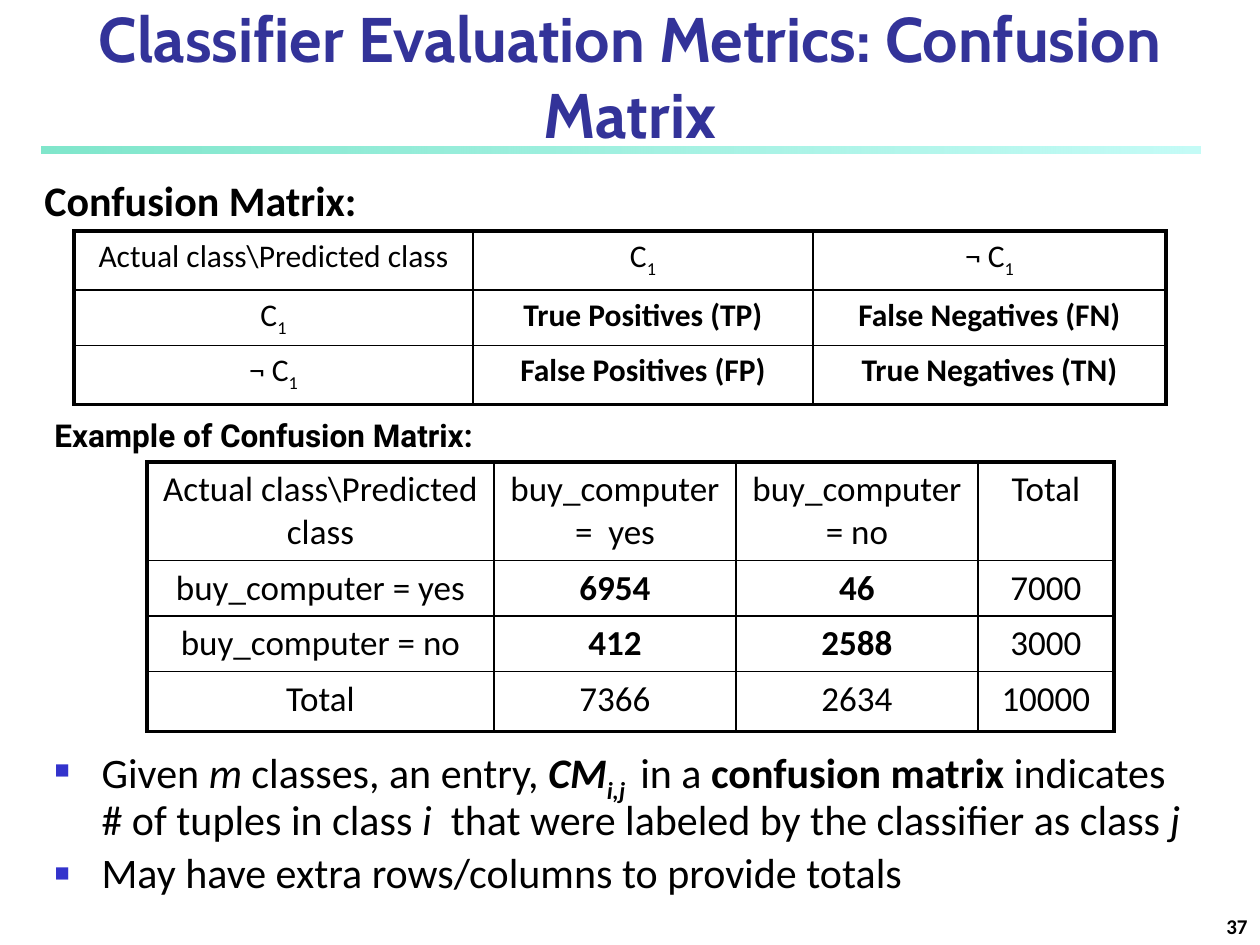
import pptx
import pptx.dml.color
import pptx.enum.shapes
import pptx.enum.text
import pptx.oxml
import pptx.oxml.ns
import pptx.util

EMU_PER_PX = 914400 / 126
BODY_FONT = "Calibri"
ANCHOR = pptx.enum.text.MSO_ANCHOR
ALIGN = pptx.enum.text.PP_ALIGN
C1 = [("C", ""), ("1", "s")]
NOT_C1 = [("¬ C", ""), ("1", "s")]

MATRIX_ROWS = [
    ["Actual class\\Predicted class", C1, NOT_C1],
    [C1, [("True Positives (TP)", "b")], [("False Negatives (FN)", "b")]],
    [NOT_C1, [("False Positives (FP)", "b")], [("True Negatives (TN)", "b")]],
]
EXAMPLE_ROWS = [
    ["Actual class\\Predicted class", "buy_computer =  yes", "buy_computer = no", "Total"],
    ["buy_computer = yes", [("6954", "b")], [("46", "b")], "7000"],
    ["buy_computer = no", [("412", "b")], [("2588", "b")], "3000"],
    ["Total", "7366", "2634", "10000"],
]
BULLETS = [
    [("Given", ""), (" m", "i"), (" classes, an entry, ", ""), ("CM", "bi"),
     ("i,j ", "bis"), (" in a ", ""), ("confusion matrix", "b"),
     (" indicates # of tuples in class ", ""), ("i", "i"),
     ("  that were labeled by the classifier as class ", ""), ("j", "i")],
    "May have extra rows/columns to provide totals",
]


def px(length):
    return pptx.util.Emu(round(length * EMU_PER_PX))


def rgb(value):
    return pptx.dml.color.RGBColor.from_string(value)


def append_xml(parent, tag, content="", attributes=""):
    """Append one DrawingML element to parent."""
    namespace = pptx.oxml.ns.nsdecls("a")
    parent.append(pptx.oxml.parse_xml(
        f"<a:{tag} {namespace} {attributes}>{content}</a:{tag}>"))


def place(shape, left, top, width, height):
    shape.left, shape.top = px(left), px(top)
    shape.width, shape.height = px(width), px(height)


def write_spans(para, content, size, font=BODY_FONT, color="000000"):
    """Write a plain string or (text, style) pairs; styles are b, i and s (subscript)."""
    spans = [(content, "")] if isinstance(content, str) else content
    for text, style in spans:
        span = para.add_run()
        span.text = text
        span.font.name = font
        span.font.size = pptx.util.Pt(size)
        span.font.color.rgb = rgb(color)
        span.font.bold = "b" in style
        span.font.italic = "i" in style
        if "s" in style:
            span.font._element.set("baseline", "-25000")


def space_before(para):
    append_xml(para._p.get_or_add_pPr(), "spcBef", '<a:spcPct val="20000"/>')


def add_rule(slide):
    bar = slide.shapes.add_shape(
        pptx.enum.shapes.MSO_SHAPE.RECTANGLE, px(42), px(147), px(1159), px(7))
    bar.shadow.inherit = False
    bar.line.fill.background()
    bar.fill.gradient()
    bar.fill.gradient_angle = 0
    stops = [("00CE98", 50), ("8FF9EF", 52)]
    for stop, (color, _) in zip(bar.fill.gradient_stops, stops):
        stop.color.rgb = rgb(color)
    colors = bar._element.spPr.iter(pptx.oxml.ns.qn("a:srgbClr"))
    for element, (_, opacity) in zip(colors, stops):
        append_xml(element, "alpha", attributes=f'val="{opacity * 1000}"')


def fill_title(title, text):
    place(title, 0, 0, 1260, 157)
    title.text_frame.vertical_anchor = ANCHOR.BOTTOM
    title.text_frame.auto_size = pptx.enum.text.MSO_AUTO_SIZE.NONE
    para = title.text_frame.paragraphs[0]
    para.alignment = ALIGN.CENTER
    write_spans(para, [(text, "b")], 36, "Cabin", "333399")


def fill_bullets(body, items):
    place(body, 42, 741, 1165, 174)
    frame = body.text_frame
    frame.auto_size = pptx.enum.text.MSO_AUTO_SIZE.NONE
    for index, item in enumerate(items):
        para = frame.add_paragraph() if index else frame.paragraphs[0]
        para.line_spacing = 0.9
        space_before(para)
        properties = para._p.get_or_add_pPr()
        properties.set("marL", str(px(47)))
        properties.set("indent", str(-px(47)))
        append_xml(properties, "buClr", '<a:srgbClr val="3333CC"/>')
        append_xml(properties, "buSzPct", attributes='val="60000"')
        append_xml(properties, "buFont", attributes='typeface="Arial"')
        append_xml(properties, "buChar", attributes='char="■"')
        write_spans(para, item, 24)


def add_label(slide, bounds, text, size, font=BODY_FONT, wrap=True,
              align=ALIGN.LEFT, anchor=ANCHOR.TOP):
    box = slide.shapes.add_textbox(*map(px, bounds))
    box.text_frame.word_wrap = wrap
    box.text_frame.vertical_anchor = anchor
    para = box.text_frame.paragraphs[0]
    para.alignment = align
    write_spans(para, [(text, "b")], size, font)


def set_borders(cell, outer_sides):
    """Draw all four borders, heavier on the sides at the table's edge."""
    for side in "LRTB":
        width = pptx.util.Pt(2.25 if side in outer_sides else 1)
        append_xml(cell._tc.get_or_add_tcPr(), f"ln{side}",
                   '<a:solidFill><a:srgbClr val="000000"/></a:solidFill>',
                   f'w="{width}"')


def add_matrix(slide, left, top, widths, heights, rows, size):
    frame = slide.shapes.add_table(
        len(heights), len(widths), px(left), px(top), px(sum(widths)), px(sum(heights)))
    table = frame.table
    table.first_row = table.horz_banding = False
    for column, width in zip(table.columns, widths):
        column.width = px(width)
    for row, height in zip(table.rows, heights):
        row.height = px(height)
    last_row, last_column = len(heights) - 1, len(widths) - 1
    for r, row in enumerate(rows):
        for c, content in enumerate(row):
            cell = table.cell(r, c)
            edges = {"L": c == 0, "R": c == last_column, "T": r == 0, "B": r == last_row}
            set_borders(cell, [side for side, outer in edges.items() if outer])
            cell.fill.background()
            para = cell.text_frame.paragraphs[0]
            para.alignment = ALIGN.CENTER
            space_before(para)
            write_spans(para, content, size)


def main():
    deck = pptx.Presentation()
    deck.slide_width, deck.slide_height = px(1260), px(945)
    slide = deck.slides.add_slide(deck.slide_layouts[1])
    add_rule(slide)
    fill_title(slide.shapes.title, "Classifier Evaluation Metrics: Confusion Matrix")
    add_matrix(slide, 147, 462, [347, 242, 242, 136], [97, 55, 55, 60], EXAMPLE_ROWS, 20)
    fill_bullets(slide.placeholders[1], BULLETS)
    add_label(slide, (32, 168, 359, 63), "Confusion Matrix:", 24)
    add_matrix(slide, 74, 231, [399, 340, 353], [59, 53, 59], MATRIX_ROWS, 18)
    add_label(slide, (42, 410, 491, 50), "Example of Confusion Matrix:", 18,
              font="Roboto", wrap=False)
    add_label(slide, (998, 892, 262, 53), "37", 12,
              align=ALIGN.RIGHT, anchor=ANCHOR.BOTTOM)
    deck.save("out.pptx")


if __name__ == "__main__":
    main()
